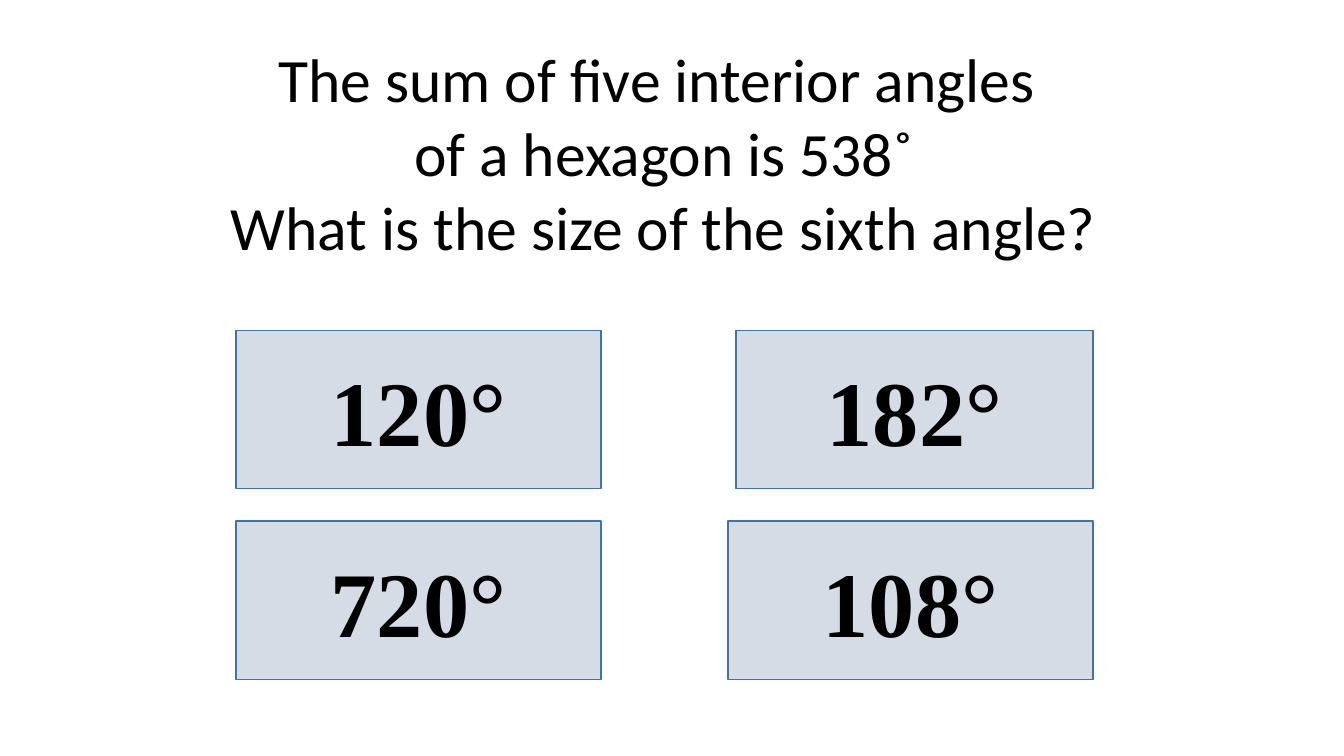
from pptx import Presentation
from pptx.dml.color import RGBColor
from pptx.enum import shapes, text
from pptx.util import Inches, Pt

BLACK = RGBColor(0x00, 0x00, 0x00)
PALE_BLUE = RGBColor(0xD6, 0xDC, 0xE5)
EDGE_BLUE = RGBColor(0x43, 0x73, 0x9E)

QUESTION = [
    "The sum of five interior angles ",
    "of a hexagon is 538˚",
    "What is the size of the sixth angle?",
]
LEFT_EDGE, RIGHT_EDGE = 2.34, 10.84
TOP_ROW, BOTTOM_ROW = 3.28, 5.17
BOX_WIDTH, NARROW_WIDTH, BOX_HEIGHT = 3.62, 3.54, 1.57
ANSWERS = [
    ("182°", RIGHT_EDGE - NARROW_WIDTH, TOP_ROW, NARROW_WIDTH),
    ("120°", LEFT_EDGE, TOP_ROW, BOX_WIDTH),
    ("108°", RIGHT_EDGE - BOX_WIDTH, BOTTOM_ROW, BOX_WIDTH),
    ("720°", LEFT_EDGE, BOTTOM_ROW, BOX_WIDTH),
]


def format_text(text_frame, font_name, size, bold):
    for paragraph in text_frame.paragraphs:
        paragraph.alignment = text.PP_ALIGN.CENTER
        for run in paragraph.runs:
            run.font.name = font_name
            run.font.size = Pt(size)
            run.font.bold = bold
            run.font.color.rgb = BLACK


def set_question(slide):
    title = slide.shapes.title
    title.left, title.top = Inches(1.94), Inches(0.36)
    title.width, title.height = Inches(9.29), Inches(2.32)
    text_frame = title.text_frame
    text_frame.text = "\n".join(QUESTION)
    text_frame.word_wrap = True
    text_frame.auto_size = text.MSO_AUTO_SIZE.NONE
    text_frame.vertical_anchor = text.MSO_ANCHOR.TOP
    format_text(text_frame, "Calibri", 44, False)


def add_answer(slide, answer, left, top, width):
    shape = slide.shapes.add_shape(
        shapes.MSO_SHAPE.RECTANGLE,
        Inches(left), Inches(top), Inches(width), Inches(BOX_HEIGHT),
    )
    shape.shadow.inherit = False
    shape.fill.solid()
    shape.fill.fore_color.rgb = PALE_BLUE
    shape.line.color.rgb = EDGE_BLUE
    shape.line.width = Pt(1)
    shape.text_frame.text = answer
    shape.text_frame.vertical_anchor = text.MSO_ANCHOR.MIDDLE
    format_text(shape.text_frame, "Times New Roman", 66, True)


def main():
    presentation = Presentation()
    presentation.slide_width = Inches(13.33)
    presentation.slide_height = Inches(7.5)
    slide = presentation.slides.add_slide(presentation.slide_layouts[5])
    set_question(slide)
    for answer in ANSWERS:
        add_answer(slide, *answer)
    presentation.save("out.pptx")


if __name__ == "__main__":
    main()
